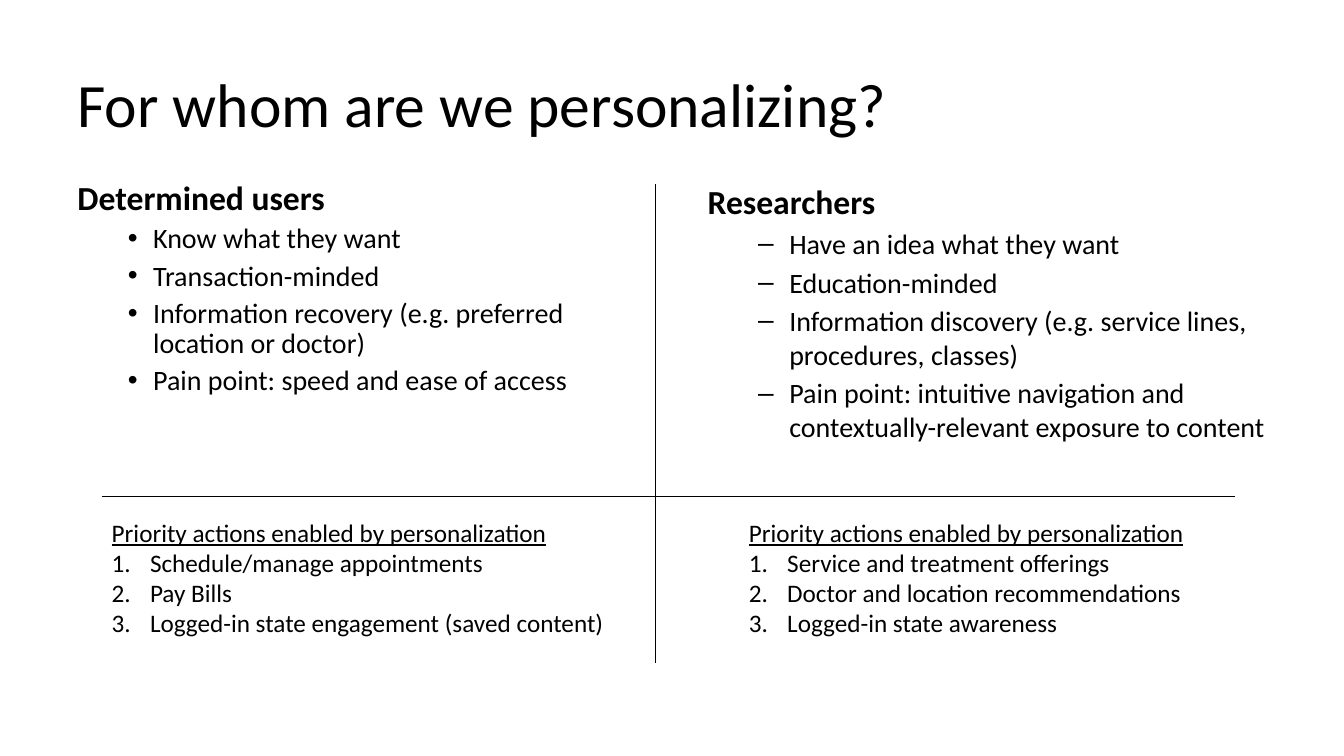
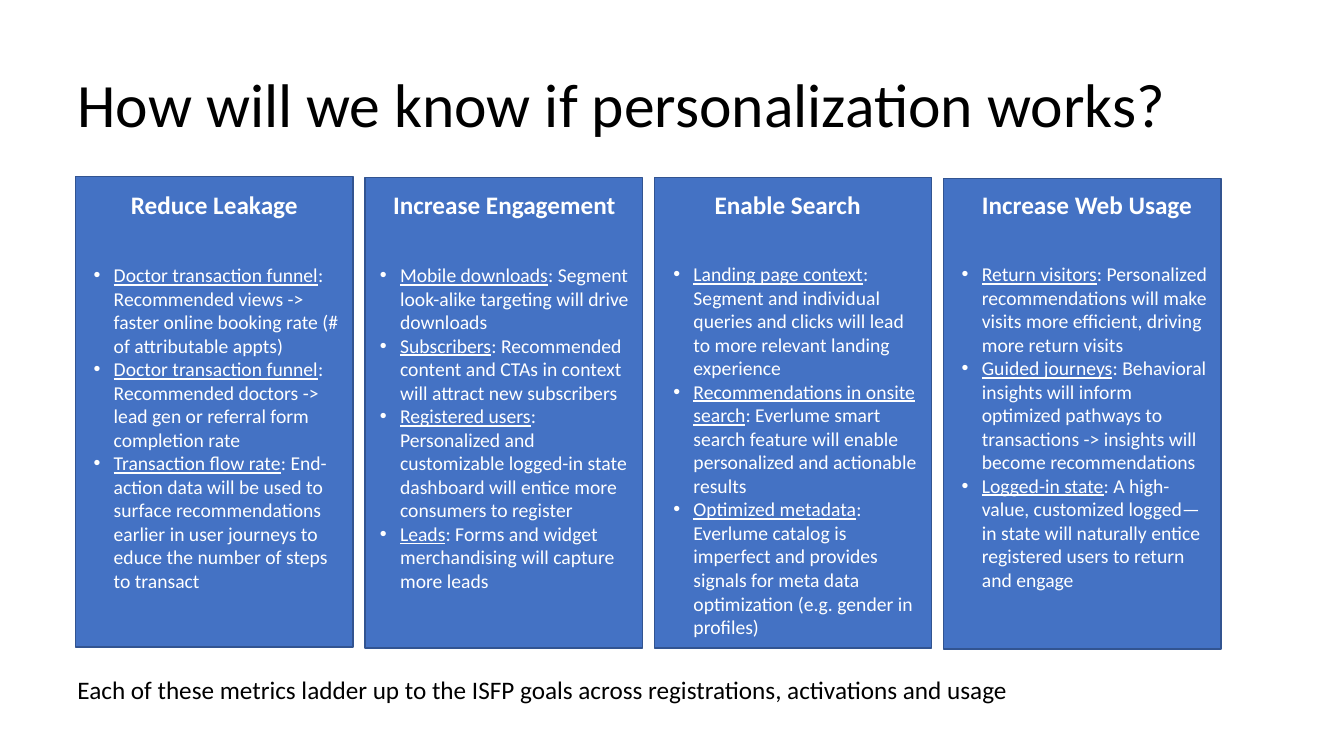
from dataclasses import dataclass

from lxml import etree
from pptx import Presentation
from pptx.dml.color import RGBColor
from pptx.enum.shapes import MSO_CONNECTOR, MSO_SHAPE
from pptx.enum.text import MSO_ANCHOR
from pptx.oxml.ns import qn
from pptx.util import Inches, Pt

RECT = MSO_SHAPE.RECTANGLE
LINE = MSO_CONNECTOR.STRAIGHT
MIDDLE = MSO_ANCHOR.MIDDLE
TOP = MSO_ANCHOR.TOP

FACE = "Calibri"
BLACK, WHITE, BLUE, EDGE = "000000", "FFFFFF", "4472C4", "325491"
NUMBER = "1."


@dataclass(frozen=True)
class Style:
    size: float
    color: str = BLACK
    bold: bool = False
    under: bool = False
    mark: str = ""
    indent: float = 0
    hang: float = 0
    before: float = 0
    pitch: float = 1.0


@dataclass(frozen=True)
class Para:
    text: str
    style: Style
    term: str = ""


@dataclass(frozen=True)
class Box:
    left: float
    top: float
    width: float
    height: float


@dataclass(frozen=True)
class Group:
    box: Box
    head: Style
    item: Style
    title: str
    items: tuple[str, ...]
    wrap: bool = True


@dataclass(frozen=True)
class Card:
    top: float
    title: str
    label: Box
    body: Box
    items: tuple[tuple[str, str], ...]


TITLE = Style(44, pitch=0.9)
NOTE = Style(18)
LABEL = Style(18, WHITE, bold=True)
METRIC = Style(14, WHITE, mark="•", indent=0.2, hang=0.2)
LEFT_HEAD = Style(24, bold=True, pitch=0.9)
LEFT_ITEM = Style(20, mark="•", indent=0.75, hang=0.25, before=5, pitch=0.9)
RIGHT_HEAD = Style(24, bold=True)
RIGHT_ITEM = Style(20, mark="–", indent=0.81, hang=0.31, before=3.5)
ACTION_HEAD = Style(18, under=True)
ACTION = Style(18, mark=NUMBER, indent=0.38, hang=0.38)
ACTION_TITLE = "Priority actions enabled by personalization"

GROUPS = (
    Group(Box(0.67, 1.75, 5.58, 3.42), LEFT_HEAD, LEFT_ITEM, "Determined users", (
        "Know what they want",
        "Transaction-minded",
        "Information recovery (e.g. preferred location or doctor)",
        "Pain point: speed and ease of access",
    )),
    Group(Box(6.92, 1.75, 6, 3.75), RIGHT_HEAD, RIGHT_ITEM, "Researchers", (
        "Have an idea what they want",
        "Education-minded",
        "Information discovery (e.g. service lines, procedures, classes)",
        "Pain point: intuitive navigation and contextually-relevant exposure to content",
    )),
    Group(Box(1.01, 5.08, 5.13, 1.31), ACTION_HEAD, ACTION, ACTION_TITLE, (
        "Schedule/manage appointments",
        "Pay Bills",
        "Logged-in state engagement (saved content)",
    ), False),
    Group(Box(7.33, 5.08, 4.56, 1.31), ACTION_HEAD, ACTION, ACTION_TITLE, (
        "Service and treatment offerings",
        "Doctor and location recommendations",
        "Logged-in state awareness",
    ), False),
)

CARDS = (
    Card(1.75, "Reduce Leakage", Box(1.2, 1.83, 1.87, 0.4), Box(0.83, 2.56, 2.63, 3.4), (
        ("Doctor transaction funnel",
         ": Recommended views -> faster online booking rate (# of attributable appts)"),
        ("Doctor transaction funnel",
         ": Recommended doctors -> lead gen or referral form completion rate"),
        ("Transaction flow rate",
         ": End-action data will be used to surface recommendations earlier in user "
         "journeys to educe the number of steps to transact"),
    )),
    Card(1.76, "Increase Engagement", Box(3.8, 1.83, 2.42, 0.4), Box(3.67, 2.56, 2.67, 3.4), (
        ("Mobile downloads", ": Segment look-alike targeting will drive downloads"),
        ("Subscribers",
         ": Recommended content and CTAs in context will attract new subscribers"),
        ("Registered users",
         ": Personalized and customizable logged-in state dashboard will entice more "
         "consumers to register"),
        ("Leads", ": Forms and widget merchandising will capture more leads"),
    )),
    Card(1.76, "Enable Search", Box(6.99, 1.83, 1.66, 0.4), Box(6.58, 2.55, 2.67, 3.87), (
        ("Landing page context",
         ": Segment and individual queries and clicks will lead to more relevant "
         "landing experience"),
        ("Recommendations in onsite search",
         ": Everlume smart search feature will enable personalized and actionable results"),
        ("Optimized metadata",
         ": Everlume catalog is imperfect and provides signals for meta data "
         "optimization (e.g. gender in profiles)"),
    )),
    Card(1.77, "Increase Web Usage", Box(9.64, 1.83, 2.3, 0.4), Box(9.44, 2.55, 2.67, 3.4), (
        ("Return visitors",
         ": Personalized recommendations will make visits more efficient, driving more "
         "return visits"),
        ("Guided journeys",
         ": Behavioral insights will inform optimized pathways to transactions -> "
         "insights will become recommendations"),
        ("Logged-in state",
         ": A high-value, customized logged—in state will naturally entice registered "
         "users to return and engage"),
    )),
)


def paint(target, color: str) -> None:
    target.rgb = RGBColor.from_string(color)


def add_run(para, text: str, style: Style, under: bool) -> None:
    run = para.add_run()
    run.text = text
    form = {"name": FACE, "size": Pt(style.size), "bold": style.bold, "underline": under}
    for key, value in form.items():
        setattr(run.font, key, value)
    paint(run.font.color, style.color)


def add_mark(para, style: Style) -> None:
    props = para._p.get_or_add_pPr()
    props.set("marL", str(Inches(style.indent)))
    props.set("indent", str(-Inches(style.hang)))
    if style.mark == NUMBER:
        etree.SubElement(props, qn("a:buFont"), typeface="+mj-lt")
        etree.SubElement(props, qn("a:buAutoNum"), type="arabicPeriod")
    else:
        etree.SubElement(props, qn("a:buFont"), typeface="Arial")
        etree.SubElement(props, qn("a:buChar"), char=style.mark)


def add_text(slide, box: Box, paras: list[Para], wrap: bool = True, anchor=TOP) -> None:
    shape = slide.shapes.add_textbox(
        Inches(box.left), Inches(box.top), Inches(box.width), Inches(box.height))
    frame = shape.text_frame
    frame.word_wrap = wrap
    frame.vertical_anchor = anchor
    for index, item in enumerate(paras):
        style = item.style
        para = frame.add_paragraph() if index else frame.paragraphs[0]
        if style.mark:
            add_mark(para, style)
        para.line_spacing = style.pitch
        para.space_before = Pt(style.before if index else 0)
        if item.term:
            add_run(para, item.term, style, True)
        add_run(para, item.text, style, style.under)


def add_line(slide, left: float, top: float, right: float, bottom: float) -> None:
    line = slide.shapes.add_connector(
        LINE, Inches(left), Inches(top), Inches(right), Inches(bottom))
    line.line.width = Pt(0.5)
    paint(line.line.color, BLACK)
    etree.SubElement(line._element.spPr, qn("a:effectLst"))


def add_panel(slide, box: Box) -> None:
    panel = slide.shapes.add_shape(
        RECT, Inches(box.left), Inches(box.top), Inches(box.width), Inches(box.height))
    panel.shadow.inherit = False
    panel.fill.solid()
    paint(panel.fill.fore_color, BLUE)
    paint(panel.line.color, EDGE)
    panel.line.width = Pt(1)


def add_slide(deck, title: str):
    slide = deck.slides.add_slide(deck.slide_layouts[6])
    add_text(slide, Box(0.67, 0.58, 12, 0.97), [Para(title, TITLE)], anchor=MIDDLE)
    return slide


def add_users(deck) -> None:
    slide = add_slide(deck, "For whom are we personalizing?")
    for group in GROUPS:
        paras = [Para(group.title, group.head)]
        paras += [Para(text, group.item) for text in group.items]
        add_text(slide, group.box, paras, group.wrap)
    add_line(slide, 1.01, 4.92, 12.25, 4.92)
    add_line(slide, 6.5, 1.83, 6.5, 6.58)


def add_goals(deck) -> None:
    slide = add_slide(deck, "How will we know if personalization works?")
    for index, card in enumerate(CARDS):
        add_panel(slide, Box(0.75 + index * 2.87, card.top, 2.75, 4.67))
        add_text(slide, card.label, [Para(card.title, LABEL)], False)
        add_text(slide, card.body, [Para(text, METRIC, term) for term, text in card.items])
    note = ("Each of these metrics ladder up to the ISFP goals across registrations, "
            "activations and usage")
    add_text(slide, Box(0.67, 6.64, 9.53, 0.4), [Para(note, NOTE)], False)


def main() -> None:
    deck = Presentation()
    deck.slide_width = Inches(13.33)
    deck.slide_height = Inches(7.5)
    add_users(deck)
    add_goals(deck)
    deck.save("out.pptx")


if __name__ == "__main__":
    main()
